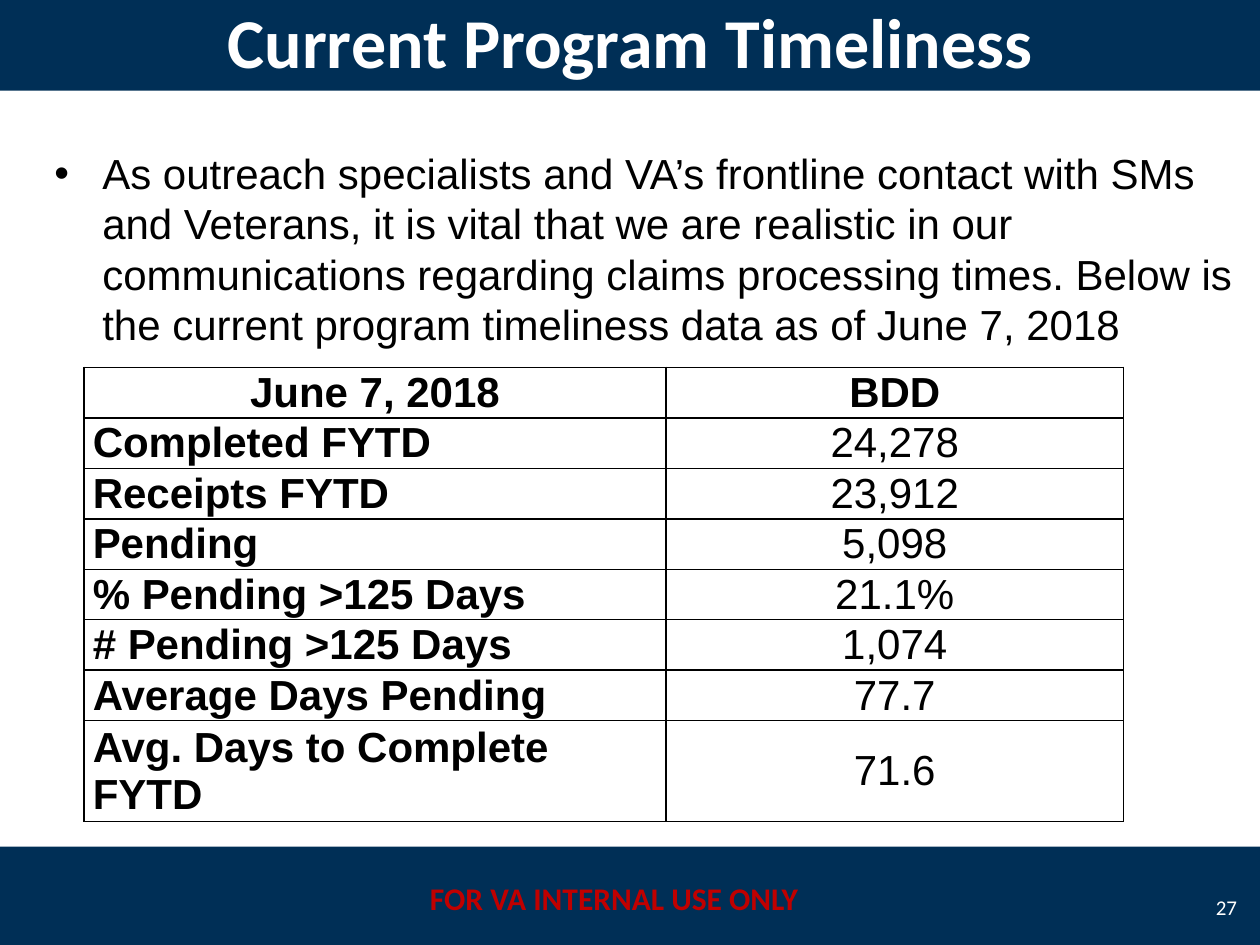
from dataclasses import dataclass
from typing import NamedTuple

from lxml import etree
from pptx import Presentation, util as u
from pptx.dml.color import RGBColor
from pptx.enum import shapes, text
from pptx.oxml import ns

CELL = u.Inches(1) / 12  # the slide is 120 columns by 90 rows
LEFT, CENTER, RIGHT = text.PP_ALIGN.LEFT, text.PP_ALIGN.CENTER, text.PP_ALIGN.RIGHT
TOP, MIDDLE = text.MSO_ANCHOR.TOP, text.MSO_ANCHOR.MIDDLE


@dataclass(frozen=True)
class Theme:
    navy: str = "002F56"
    white: str = "FFFFFF"
    black: str = "000000"
    red: str = "C00000"
    head_font: str = "Calibri"
    body_font: str = "Arial"
    title: int = 40
    body: int = 24
    notice: int = 18
    number: int = 12


class Box(NamedTuple):
    col: float
    row: float
    cols: float
    rows: float

    def emu(self) -> list[int]:
        return [cells(v) for v in self]


class Measure(NamedTuple):
    label: str
    value: str
    lines: int = 1


T = Theme()
TITLE_BAND = Box(0, -0.96, 120, 9.6)
FOOTER_BAND = Box(0, 80.64, 120, 9.6)
TABLE = Box(8, 35, 99, 43.2)
LABEL_SHARE = 0.56
HEADER = Measure("June 7, 2018", "BDD")
MEASURES = [
    Measure("Completed FYTD", "24,278"),
    Measure("Receipts FYTD", "23,912"),
    Measure("Pending", "5,098"),
    Measure("% Pending >125 Days", "21.1%"),
    Measure("# Pending >125 Days", "1,074"),
    Measure("Average Days Pending", "77.7"),
    Measure("Avg. Days to Complete FYTD", "71.6", lines=2),
]
INTRO = (
    "As outreach specialists and VA’s frontline contact with SMs and Veterans, "
    "it is vital that we are realistic in our communications regarding claims "
    "processing times. Below is the current program timeliness data as of June 7, 2018"
)


def cells(n: float) -> int:
    return round(n * CELL)


def write(tf, words: str, *, size: int = T.body, font: str = T.body_font,
          color: str = T.black, bold: bool = False, align=LEFT,
          bullet: bool = False) -> None:
    p = tf.paragraphs[0]
    p.alignment = align
    if bullet:
        pPr = p._p.get_or_add_pPr()
        pPr.set("marL", str(u.Inches(0.38)))
        pPr.set("indent", str(-u.Inches(0.38)))
        etree.SubElement(pPr, ns.qn("a:buFont"), typeface="Arial")
        etree.SubElement(pPr, ns.qn("a:buChar"), char="•")
    r = p.add_run()
    r.text = words
    r.font.name, r.font.size, r.font.bold = font, u.Pt(size), bold
    r.font.color.rgb = RGBColor.from_string(color)


def add_band(s, box: Box) -> None:
    sp = s.shapes.add_shape(shapes.MSO_SHAPE.RECTANGLE, *box.emu())
    sp.shadow.inherit = False
    sp.fill.solid()
    sp.fill.fore_color.rgb = RGBColor.from_string(T.navy)
    sp.line.fill.background()


def add_text(s, box: Box, words: str, anchor=TOP, **style) -> None:
    tf = s.shapes.add_textbox(*box.emu()).text_frame
    tf.word_wrap = True
    tf.vertical_anchor = anchor
    write(tf, words, **style)


def outline(cell) -> None:
    """Draw a thin black line on all four sides of a table cell."""
    tcPr = cell._tc.get_or_add_tcPr()
    for i, side in enumerate(("lnL", "lnR", "lnT", "lnB")):
        ln = etree.Element(ns.qn(f"a:{side}"), w=str(u.Pt(1)))
        fill = etree.SubElement(ln, ns.qn("a:solidFill"))
        etree.SubElement(fill, ns.qn("a:srgbClr"), val=T.black)
        tcPr.insert(i, ln)


def add_measures(s, box: Box, measures: list[Measure]) -> None:
    table = s.shapes.add_table(len(measures), 2, *box.emu()).table
    table.first_row = table.horz_banding = False
    for column, share in zip(table.columns, (LABEL_SHARE, 1 - LABEL_SHARE)):
        column.width = cells(box.cols * share)
    line_height = box.rows / sum(m.lines for m in measures)
    for i, m in enumerate(measures):
        table.rows[i].height = cells(m.lines * line_height)
        for j, words in enumerate((m.label, m.value)):
            cell = table.cell(i, j)
            cell.fill.background()
            cell.vertical_anchor = MIDDLE
            cell.margin_left = cell.margin_right = u.Inches(0.07)
            cell.margin_top = cell.margin_bottom = 0
            outline(cell)
            write(cell.text_frame, words, bold=i == 0 or j == 0,
                  align=CENTER if i == 0 or j == 1 else LEFT)


def main() -> None:
    prs = Presentation()
    prs.slide_width, prs.slide_height = cells(120), cells(90)
    s = prs.slides.add_slide(prs.slide_layouts[6])
    for band in (FOOTER_BAND, TITLE_BAND):
        add_band(s, band)
    add_text(s, Box(39, 83.16, 39, 4.8), "FOR VA INTERNAL USE ONLY", size=T.notice,
             font=T.head_font, color=T.red, bold=True, align=CENTER)
    add_text(s, TITLE_BAND, "Current Program Timeliness", MIDDLE, size=T.title,
             font=T.head_font, color=T.white, bold=True, align=CENTER)
    add_text(s, Box(114, 84, 5, 4.8), "27", MIDDLE, size=T.number,
             font=T.head_font, color=T.white, align=RIGHT)
    add_text(s, Box(4, 13.44, 116, 20.64), INTRO, bullet=True)
    add_measures(s, TABLE, [HEADER, *MEASURES])
    prs.save("out.pptx")


if __name__ == "__main__":
    main()
